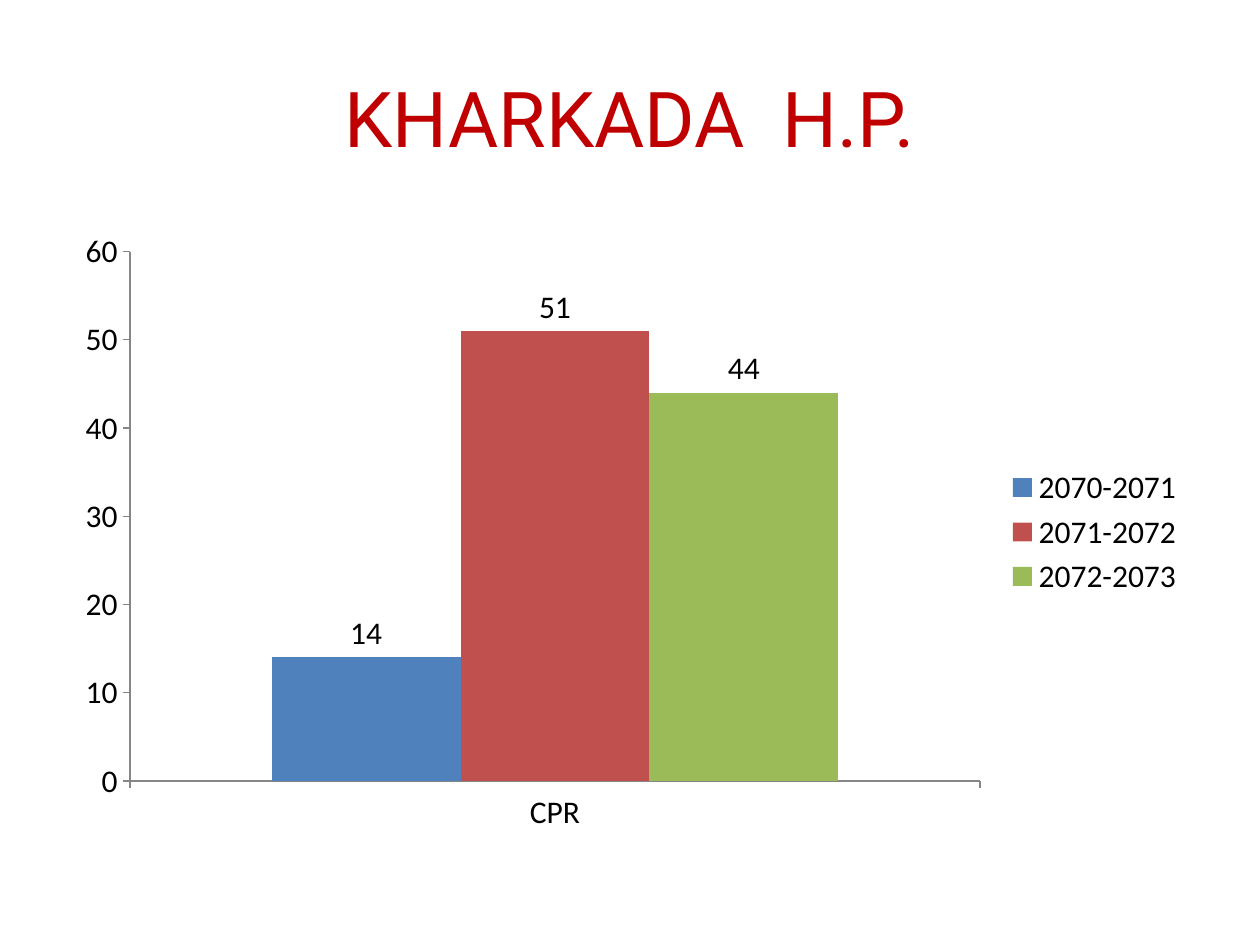
import pptx
import pptx.chart.data
import pptx.dml.color
import pptx.enum.chart
import pptx.enum.text
import pptx.util

PX = 914400 / 126
COLORS = {
    "title": "C00000",
    "text": "000000",
    "axis": "868686",
    "2070-2071": "4F81BD",
    "2071-2072": "C0504D",
    "2072-2073": "9BBB59",
}
CPR_BY_YEAR = {"2070-2071": 14, "2071-2072": 51, "2072-2073": 44}


def px(length):
    return pptx.util.Emu(round(length * PX))


def color(name):
    return pptx.dml.color.RGBColor.from_string(COLORS[name])


def set_font(font, name, size, color_name):
    font.name = name
    font.size = pptx.util.Pt(size)
    font.color.rgb = color(color_name)


def add_title(slide, text, left, top, width, height):
    title = slide.shapes.title
    title.left, title.top = px(left), px(top)
    title.width, title.height = px(width), px(height)
    title.text_frame.text = text
    title.text_frame.vertical_anchor = pptx.enum.text.MSO_ANCHOR.MIDDLE
    paragraph = title.text_frame.paragraphs[0]
    paragraph.alignment = pptx.enum.text.PP_ALIGN.CENTER
    set_font(paragraph.font, "Roboto", 44, "title")


def format_axis(axis):
    axis.has_major_gridlines = False
    axis.major_tick_mark = pptx.enum.chart.XL_TICK_MARK.OUTSIDE
    axis.minor_tick_mark = pptx.enum.chart.XL_TICK_MARK.NONE
    axis.format.line.color.rgb = color("axis")
    axis.format.line.width = pptx.util.Pt(0.75)


def format_series(series):
    series.format.fill.solid()
    series.format.fill.fore_color.rgb = color(series.name)
    series.invert_if_negative = False
    labels = series.data_labels
    labels.show_value = True
    labels.position = pptx.enum.chart.XL_LABEL_POSITION.OUTSIDE_END


def add_column_chart(slide, left, top, width, height):
    chart_data = pptx.chart.data.CategoryChartData()
    chart_data.categories = ["CPR"]
    for year, value in CPR_BY_YEAR.items():
        chart_data.add_series(year, [value])
    chart = slide.shapes.add_chart(
        pptx.enum.chart.XL_CHART_TYPE.COLUMN_CLUSTERED,
        px(left), px(top), px(width), px(height), chart_data,
    ).chart
    set_font(chart.font, "Calibri", 18, "text")
    chart.has_title = False
    chart.has_legend = True
    chart.legend.position = pptx.enum.chart.XL_LEGEND_POSITION.RIGHT
    chart.legend.include_in_layout = False
    format_axis(chart.category_axis)
    format_axis(chart.value_axis)
    chart.value_axis.minimum_scale = 0
    chart.value_axis.maximum_scale = 60
    chart.value_axis.major_unit = 10
    plot = chart.plots[0]
    plot.gap_width = 150
    plot.overlap = 0
    plot.vary_by_categories = False
    for series in plot.series:
        format_series(series)


def main():
    presentation = pptx.Presentation()
    presentation.slide_width = px(1260)
    presentation.slide_height = px(945)
    slide = presentation.slides.add_slide(presentation.slide_layouts[5])
    add_title(slide, "KHARKADA  H.P.", 63, 38, 1134, 158)
    add_column_chart(slide, 63, 220, 1134, 624)
    presentation.save("out.pptx")


if __name__ == "__main__":
    main()
